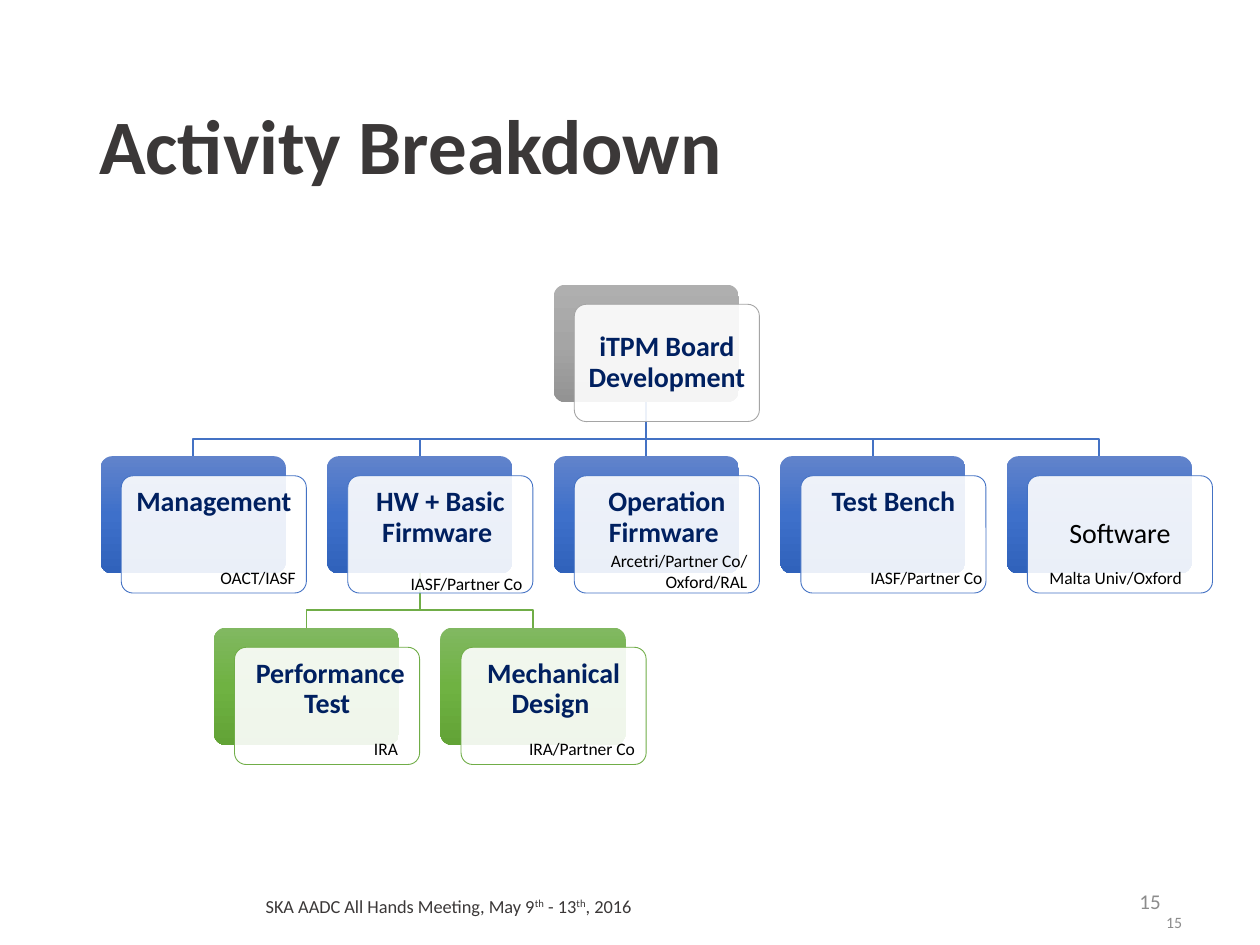
import copy

import pptx
import pptx.dml.color
import pptx.enum.shapes
import pptx.enum.text
import pptx.oxml.ns
import pptx.util

Pt = pptx.util.Pt
qn = pptx.oxml.ns.qn
ALIGN = pptx.enum.text.PP_ALIGN
ANCHOR = pptx.enum.text.MSO_ANCHOR
ROUNDED = pptx.enum.shapes.MSO_SHAPE.ROUNDED_RECTANGLE

FONT = "Calibri"
CARD_W, CARD_H = 105.8, 67
COL_X, COL_PITCH = 57.5, 129.45
ROW_Y, ROW_PITCH = 162.7, 98
SHIFT_X, SHIFT_Y = 11.8, 11.2
TEXT_INSET = 2
ELBOW_RISE = 10

GRAY = ("A5A5A5", ("AFAFAF", "A5A5A5", "939393"))
BLUE = ("4472C4", ("6183CB", "3E70CA", "3062BB"))
GREEN = ("70AD47", ("81B861", "6FB242", "62A336"))

ROOT = (2, 0)
HARDWARE = (1, 1)
CARDS = [
    (ROOT, "iTPM Board Development", GRAY),
    ((0, 1), "Management", BLUE),
    (HARDWARE, "HW + Basic Firmware ", BLUE),
    ((0.5, 2), " Performance Test", GREEN),
    ((1.5, 2), "Mechanical Design ", GREEN),
    ((2, 1), "Operation Firmware ", BLUE),
    ((3, 1), "Test Bench", BLUE),
    ((4, 1), "Software", BLUE),
]
LINKS = [(ROOT, (col, 1), BLUE) for col in (4, 3, 2, 1, 0)]
LINKS += [(HARDWARE, (col, 2), GREEN) for col in (1.5, 0.5)]

PARTNERS = [
    ("OACT/IASF", 118.8, 320.4, 75, 19.4, ALIGN.LEFT),
    ("IASF/Partner Co", 227.5, 324, 98, 19.4, ALIGN.LEFT),
    ("Arcetri/Partner Co/ Oxford/RAL", 321.1, 311, 113, 31.5, ALIGN.RIGHT),
    ("IASF/Partner Co", 490.3, 320.4, 98, 19.4, ALIGN.LEFT),
    ("IRA", 206.6, 418.3, 39.6, 19.4, ALIGN.LEFT),
    ("IRA/Partner Co", 295.2, 418.3, 98, 19.4, ALIGN.LEFT),
    ("Malta Univ/Oxford", 592.6, 320.4, 98, 19.4, ALIGN.LEFT),
]


def rgb(color):
    return pptx.dml.color.RGBColor.from_string(color)


def add_run(p, text, size, color, bold=False, baseline=0):
    r = p.add_run()
    r.text = text
    r.font.name = FONT
    r.font.size = Pt(size)
    r.font.bold = bold
    r.font.color.rgb = rgb(color)
    if baseline:
        r._r.get_or_add_rPr().set("baseline", str(baseline * 1000))


def add_text(s, box, align, anchor=ANCHOR.TOP, margin=None):
    sp = s.shapes.add_textbox(*map(Pt, box))
    tf = sp.text_frame
    tf.word_wrap = True
    tf.vertical_anchor = anchor
    if margin is not None:
        tf.margin_left = tf.margin_right = Pt(margin)
        tf.margin_top = tf.margin_bottom = Pt(margin)
    p = tf.paragraphs[0]
    p.alignment = align
    return p


def add_title(s, text):
    sp = s.shapes.title
    sp.left, sp.top, sp.width, sp.height = map(Pt, (49.5, 33.1, 621, 104.4))
    tf = sp.text_frame
    tf.auto_size = pptx.enum.text.MSO_AUTO_SIZE.NONE
    tf.vertical_anchor = ANCHOR.MIDDLE
    p = tf.paragraphs[0]
    p.alignment = ALIGN.LEFT
    p.line_spacing = 0.9
    add_run(p, text, 44, "3B3838", True)


def card_corner(cell):
    col, row = cell
    return COL_X + col * COL_PITCH, ROW_Y + row * ROW_PITCH


def add_link(s, parent, child, color):
    x1, y1 = card_corner(parent)
    x2, y2 = card_corner(child)
    x1, x2, y1 = x1 + CARD_W / 2, x2 + CARD_W / 2, y1 + CARD_H
    if x1 == x2:
        straight = pptx.enum.shapes.MSO_CONNECTOR.STRAIGHT
        sp = s.shapes.add_connector(straight, Pt(x1), Pt(y1), Pt(x2), Pt(y2))
        sp._element.spPr.append(pptx.oxml.parse_xml(
            f'<a:effectLst {pptx.oxml.ns.nsdecls("a")}/>'))
    else:
        bend = y2 - ELBOW_RISE
        fb = s.shapes.build_freeform(Pt(x1), Pt(y1))
        points = [(x1, bend), (x2, bend), (x2, y2)]
        fb.add_line_segments([(Pt(x), Pt(y)) for x, y in points], close=False)
        sp = fb.convert_to_shape()
        sp.fill.background()
        sp.shadow.inherit = False
    sp.line.color.rgb = rgb(color)
    sp.line.width = Pt(1)


def add_rounded(s, x, y):
    sp = s.shapes.add_shape(ROUNDED, Pt(x), Pt(y), Pt(CARD_W), Pt(CARD_H))
    sp.adjustments[0] = 0.1
    sp.shadow.inherit = False
    return sp


def fill_gradient(sp, colors):
    sp.fill.gradient()
    sp.fill.gradient_angle = 270
    stops = sp._element.spPr.find(".//" + qn("a:gsLst"))
    stops.insert(1, copy.deepcopy(stops[0]))
    for stop, color, position in zip(sp.fill.gradient_stops, colors, (0, 0.5, 1)):
        stop.color.rgb = rgb(color)
        stop.position = position


def fill_translucent(sp, color, opacity):
    sp.fill.solid()
    sp.fill.fore_color.rgb = rgb(color)
    clr = sp._element.spPr.find(".//" + qn("a:srgbClr"))
    alpha = clr.makeelement(qn("a:alpha"), {"val": str(opacity * 1000)})
    clr.append(alpha)


def add_card(s, cell, text, palette):
    outline, gradient = palette
    x, y = card_corner(cell)
    back = add_rounded(s, x, y)
    fill_gradient(back, gradient)
    back.line.fill.background()

    x, y = x + SHIFT_X, y + SHIFT_Y
    front = add_rounded(s, x, y)
    fill_translucent(front, "FFFFFF", 90)
    front.line.color.rgb = rgb(outline)
    front.line.width = Pt(0.5)

    plain = text == "Software"
    anchor = ANCHOR.MIDDLE if plain or cell == ROOT else ANCHOR.TOP
    box = (x + TEXT_INSET, y + TEXT_INSET,
           CARD_W - 2 * TEXT_INSET, CARD_H - 2 * TEXT_INSET)
    p = add_text(s, box, ALIGN.CENTER, anchor, 4.8)
    p.line_spacing = 0.9
    add_run(p, text, 16, "000000" if plain else "002060", not plain)


def add_footer(s):
    p = add_text(s, (115.2, 503.3, 282.2, 28.8), ALIGN.CENTER, ANCHOR.MIDDLE)
    for text, baseline in [("SKA AADC All Hands Meeting, May 9", 0), ("th", 30),
                           (" - 13", 0), ("th", 30), (", 2016", 0)]:
        add_run(p, text, 10.5, "3B3838", baseline=baseline)
    for x, y, size in [(508.3, 500.4, 12), (520.6, 512.6, 9)]:
        p = add_text(s, (x, y, 162, 28.8), ALIGN.RIGHT, ANCHOR.MIDDLE)
        add_run(p, "15", size, "8C8C8C")


def main():
    prs = pptx.Presentation()
    prs.slide_width, prs.slide_height = Pt(720), Pt(540)
    s = prs.slides.add_slide(prs.slide_layouts[5])
    add_title(s, "Activity Breakdown")
    add_footer(s)
    for parent, child, palette in LINKS:
        add_link(s, parent, child, palette[0])
    for cell, text, palette in CARDS:
        add_card(s, cell, text, palette)
    for text, x, y, w, h, align in PARTNERS:
        p = add_text(s, (x, y, w, h), align)
        add_run(p, text, 10, "000000")
    prs.save("out.pptx")


if __name__ == "__main__":
    main()
